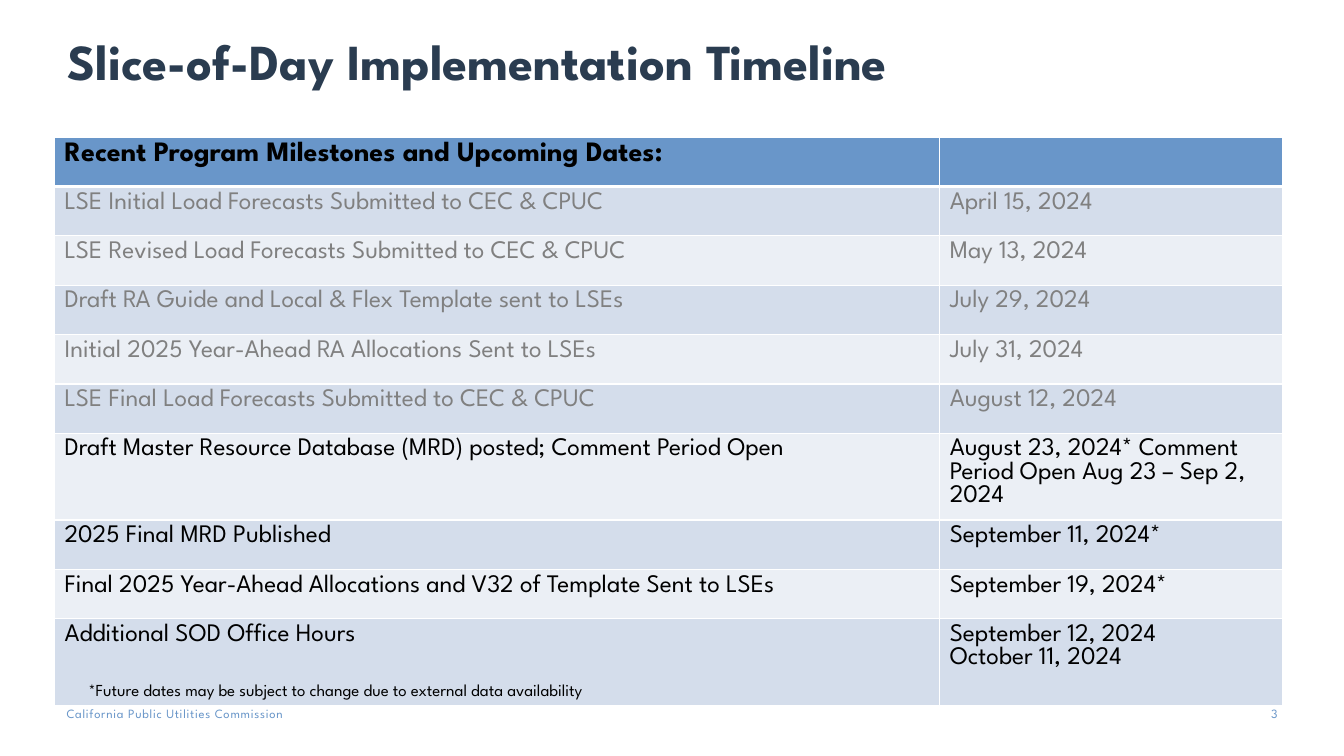
from dataclasses import dataclass

import pptx
import pptx.dml.color
import pptx.enum.text
import pptx.oxml
import pptx.oxml.ns
import pptx.util

Inches = pptx.util.Inches
Align = pptx.enum.text.PP_ALIGN
Anchor = pptx.enum.text.MSO_ANCHOR
qn = pptx.oxml.ns.qn


@dataclass(frozen=True)
class Theme:
    face: str = "League Spartan"
    navy: str = "2A3C50"
    blue: str = "6996C9"
    dark: str = "D4DDEB"
    light: str = "EBEFF5"
    gray: str = "808080"
    black: str = "000000"
    white: str = "FFFFFF"
    title: int = 36
    head: int = 20
    body: int = 18
    note: int = 12
    foot: int = 9


THEME = Theme()


@dataclass(frozen=True)
class Label:
    text: str
    box: tuple[float, float, float, float]
    size: int
    color: str
    bold: bool = False
    pads: tuple[float, float, float, float] = (0, 0, 0, 0)
    align: Align = Align.LEFT
    anchor: Anchor = Anchor.TOP
    track: int = 0  # letter spacing in hundredths of a point


@dataclass(frozen=True)
class Event:
    name: str
    date: str
    past: bool = False
    tall: bool = False


LABELS = [
    Label("Slice-of-Day Implementation Timeline", (0.67, 0.4, 11.58, 0.55),
          THEME.title, THEME.navy, bold=True, pads=(0, 0.05, 0.1, 0.05),
          anchor=Anchor.BOTTOM),
    Label("California Public Utilities Commission", (0.66, 7, 3.21, 0.15),
          THEME.foot, THEME.blue, track=50),
    Label("3", (12.25, 7, 0.42, 0.2), THEME.foot, THEME.blue, align=Align.RIGHT),
    Label("*Future dates may be subject to change due to external data availability",
          (0.78, 6.69, 7.29, 0.3), THEME.note, THEME.black,
          pads=(0.1, 0.05, 0.1, 0.05)),
]

HEADS = ("Recent Program Milestones and Upcoming Dates:", "")
EVENTS = [
    Event("LSE Initial Load Forecasts Submitted to CEC & CPUC", "April 15, 2024", past=True),
    Event("LSE Revised Load Forecasts Submitted to CEC & CPUC", "May 13, 2024", past=True),
    Event("Draft RA Guide and Local & Flex Template sent to LSEs", "July 29, 2024", past=True),
    Event("Initial 2025 Year-Ahead RA Allocations Sent to LSEs", "July 31, 2024", past=True),
    Event("LSE Final Load Forecasts Submitted to CEC & CPUC", "August 12, 2024", past=True),
    Event("Draft Master Resource Database (MRD) posted; Comment Period Open",
          "August 23, 2024* Comment Period Open Aug 23 – Sep 2, 2024", tall=True),
    Event("2025 Final MRD Published", "September 11, 2024*"),
    Event("Final 2025 Year-Ahead Allocations and V32 of Template Sent to LSEs",
          "September 19, 2024*"),
    Event("Additional SOD Office Hours", "September 12, 2024\nOctober 11, 2024", tall=True),
]
COLS = (8.78, 3.4)
ROW, TALL = 0.49, 0.86


def write(frame, text: str, size: int, color: str, bold: bool = False,
          align: Align = Align.LEFT) -> None:
    frame.text = text
    for para in frame.paragraphs:
        para.alignment = align
        font = para.font
        font.name, font.size, font.bold = THEME.face, pptx.util.Pt(size), bold
        font.color.rgb = pptx.dml.color.RGBColor.from_string(color)


def add_label(slide, label: Label) -> None:
    shape = slide.shapes.add_textbox(*map(Inches, label.box))
    frame = shape.text_frame
    frame.word_wrap = True
    frame.vertical_anchor = label.anchor
    (frame.margin_left, frame.margin_top,
     frame.margin_right, frame.margin_bottom) = map(Inches, label.pads)
    write(frame, label.text, label.size, label.color, label.bold, label.align)
    if label.track:
        for props in shape.element.iter(qn("a:defRPr")):
            props.set("spc", str(label.track))


def add_edge(props, side: str, points: int) -> None:
    line = pptx.oxml.parse_xml(
        f'<a:{side} {pptx.oxml.ns.nsdecls("a")} w="{pptx.util.Pt(points)}">'
        f'<a:solidFill><a:srgbClr val="{THEME.white}"/></a:solidFill></a:{side}>')
    props.append(line)


def fill_cell(cell, text: str, size: int, color: str, fill: str,
              bold: bool = False, top: int = 1, base: int = 1) -> None:
    write(cell.text_frame, text, size, color, bold)
    props = cell._tc.get_or_add_tcPr()
    for side, width in (("lnL", 1), ("lnR", 1), ("lnT", top), ("lnB", base)):
        add_edge(props, side, width)
    cell.fill.solid()
    cell.fill.fore_color.rgb = pptx.dml.color.RGBColor.from_string(fill)


def add_dates(slide) -> None:
    highs = [ROW] + [TALL if event.tall else ROW for event in EVENTS]
    table = slide.shapes.add_table(
        len(highs), len(COLS), Inches(0.54), Inches(1.36),
        Inches(sum(COLS)), Inches(sum(highs))).table
    table.first_row = table.horz_banding = False
    for col, width in zip(table.columns, COLS):
        col.width = Inches(width)
    for row, high in zip(table.rows, highs):
        row.height = Inches(high)

    # Header row with a thick rule below
    for cell, text in zip(table.rows[0].cells, HEADS):
        fill_cell(cell, text, THEME.head, THEME.black, THEME.blue, bold=True, base=3)

    # Banded rows, with past events in gray
    for i, event in enumerate(EVENTS):
        color = THEME.gray if event.past else THEME.black
        fill = THEME.light if i % 2 else THEME.dark
        for cell, text in zip(table.rows[i + 1].cells, (event.name, event.date)):
            fill_cell(cell, text, THEME.body, color, fill, top=1 if i else 3)


def main() -> None:
    deck = pptx.Presentation()
    deck.slide_width, deck.slide_height = Inches(13.33), Inches(7.5)
    slide = deck.slides.add_slide(deck.slide_layouts[6])
    add_dates(slide)
    for label in LABELS:
        add_label(slide, label)
    deck.save("out.pptx")


if __name__ == "__main__":
    main()
